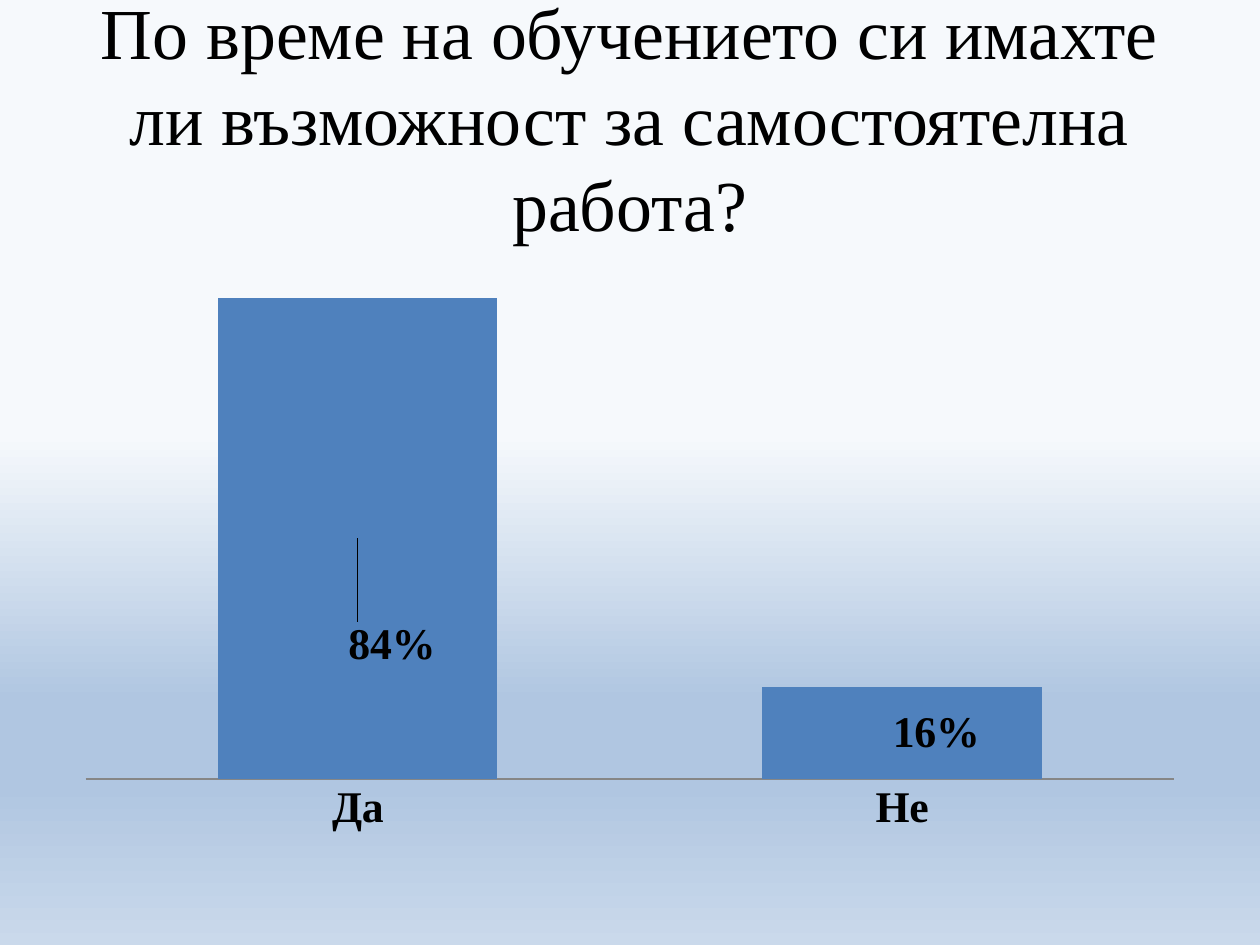
from lxml.etree import SubElement as Sub
from pptx import Presentation
from pptx.chart.data import CategoryChartData as Data
from pptx.dml.color import RGBColor as Rgb
from pptx.enum.chart import XL_CHART_TYPE as Kind, XL_TICK_MARK as Tick
from pptx.enum.text import MSO_ANCHOR as Anchor, PP_ALIGN as Align
from pptx.oxml import parse_xml
from pptx.oxml.ns import nsdecls, qn
from pptx.util import Cm, Pt

HUES = {"text": "000000", "bar": "4F81BD", "axis": "868686",
        "pale": "F6F9FC", "mid": "B0C6E1", "low": "CAD9EB"}
STOPS = [(46, "pale"), (74, "mid"), (83, "mid"), (100, "low")]
VOTES = {"Да": 0.84, "Не": 0.16}
SHIFTS = [(0.03, 0.18), (0.03, 0)]


def hue(name):
    return Rgb.from_string(HUES[name])


def layout(**parts):
    """Build a manual chart layout from its parts, as shares of the chart."""
    node = parse_xml(f"<c:layout {nsdecls('c')}><c:manualLayout/></c:layout>")
    for tag, value in parts.items():
        Sub(node[0], qn(f"c:{tag}")).set("val", str(value))
    return node


class Deck:
    face = "Times New Roman"

    def __init__(self):
        self.file = Presentation()
        self.file.slide_width, self.file.slide_height = Cm(25.4), Cm(19.05)
        self.slide = self.file.slides.add_slide(self.file.slide_layouts[6])

    def style(self, font, size, bold=False):
        font.name, font.size, font.bold = self.face, Pt(size), bold
        font.color.rgb = hue("text")

    def backdrop(self, stops):
        fill = self.slide.background.fill
        fill.gradient()
        fill.gradient_angle = 270
        group = self.slide.element.find(".//" + qn("a:gsLst"))
        for old in list(group):
            group.remove(old)
        for place, name in stops:
            stop = Sub(group, qn("a:gs"), pos=str(place * 1000))
            Sub(stop, qn("a:srgbClr"), val=HUES[name])

    def title(self, text, box, size):
        frame = self.slide.shapes.add_textbox(*map(Cm, box)).text_frame
        frame.word_wrap = True
        frame.vertical_anchor = Anchor.MIDDLE
        frame.margin_left = frame.margin_right = Cm(0.75)
        line = frame.paragraphs[0]
        line.text, line.alignment = text, Align.CENTER
        self.style(line.font, size)

    def bars(self, votes, shifts, box, size):
        data = Data(number_format="0%")
        data.categories = list(votes)
        data.add_series("Series 1", list(votes.values()))
        chart = self.slide.shapes.add_chart(
            Kind.COLUMN_STACKED, *map(Cm, box), data).chart
        chart.has_legend = chart.has_title = False
        chart.font.name, chart.font.size = "Calibri", Pt(18)
        chart.font.color.rgb = hue("text")
        area = chart.plots[0]
        area.gap_width, area.overlap = 95, 100
        area.vary_by_categories = False
        self.axes(chart, size)
        row = area.series[0]
        row.format.fill.solid()
        row.format.fill.fore_color.rgb = hue("bar")
        self.labels(row, shifts, size)
        frame = chart.element.find(".//" + qn("c:plotArea"))
        for old in frame.findall(qn("c:layout")):
            frame.remove(old)
        frame.insert(0, layout(layoutTarget="inner", xMode="edge", yMode="edge",
                               x=0.02, y=0.02, w=0.96, h=0.87))

    def axes(self, chart, size):
        base, scale = chart.category_axis, chart.value_axis
        base.major_tick_mark = base.minor_tick_mark = Tick.NONE
        base.format.line.color.rgb = hue("axis")
        self.style(base.tick_labels.font, size, True)
        scale.minimum_scale, scale.maximum_scale = 0, 0.9
        scale.has_major_gridlines = scale.visible = False

    def labels(self, row, shifts, size):
        """Show the values, each moved from the middle of its bar."""
        marks = row.data_labels
        marks.show_value = True
        marks.number_format, marks.number_format_is_linked = "0%", False
        self.style(marks.font, size, True)
        for i, (x, y) in enumerate(shifts):
            self.style(row.points[i].data_label.font, size, True)
        nodes = row.data_labels._element.findall(qn("c:dLbl"))
        for node, (x, y) in zip(nodes, shifts):
            node.insert(1, layout(x=x, y=y))


def main():
    deck = Deck()
    deck.backdrop(STOPS)
    deck.title("По време на обучението си имахте ли възможност "
               "за самостоятелна работа?", (1.27, 0.76, 22.86, 3.18), 41)
    deck.bars(VOTES, SHIFTS, (1.27, 5.08, 22.86, 11.94), 25)
    deck.file.save("out.pptx")


if __name__ == "__main__":
    main()
